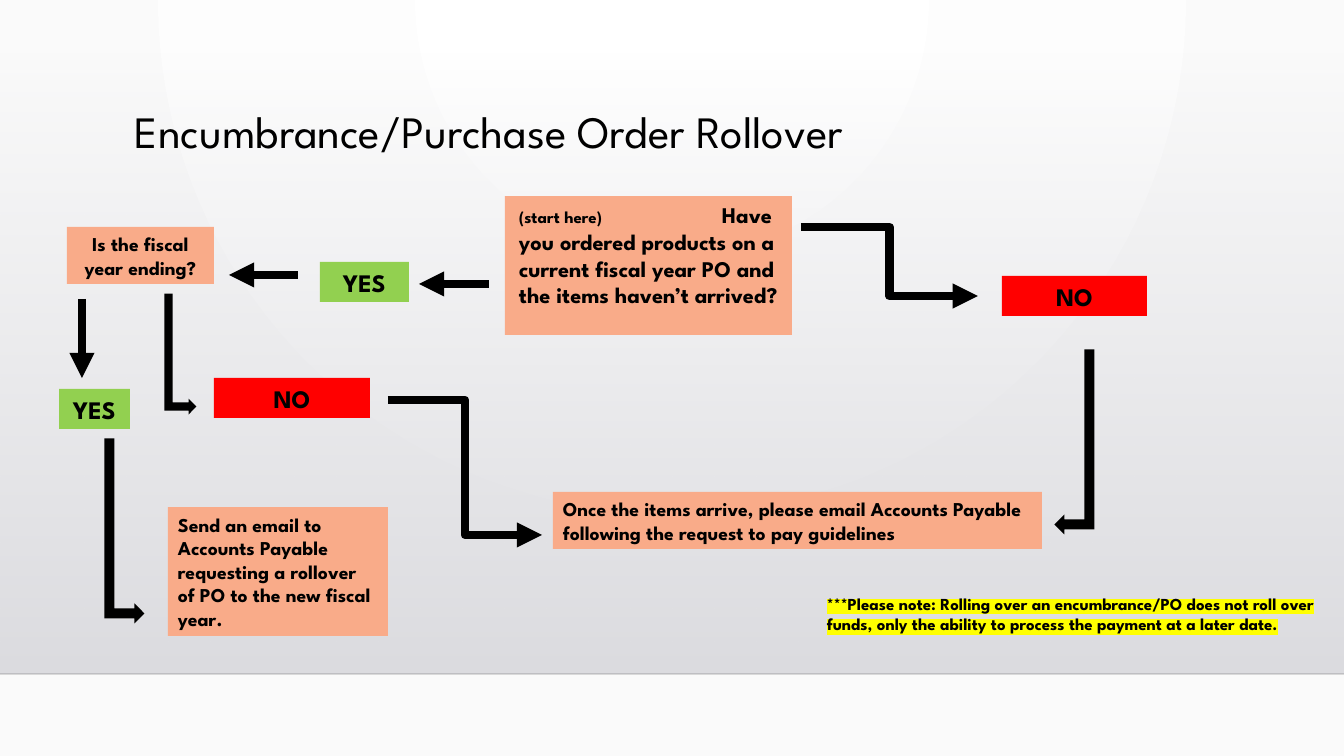
import pptx
import pptx.util
import pptx.oxml
import pptx.oxml.ns
import pptx.dml.color
import pptx.enum.shapes
import pptx.enum.text
import lxml.etree

PX = 12192000 / 1344
SLIDE = (1344, 756)
FONT = "League Spartan"
COLORS = {
    "text": "000000", "arrow": "000000", "step": "F9AB89", "yes": "92D050",
    "no": "FF0000", "highlight": "FFFF00", "center": "FFFFFF", "edge": "FAFAFA",
    "shade_top": "DCDCE0", "shade_bottom": "DEDEE2",
}

HEADING = ("Encumbrance/Purchase Order Rollover", (125, 105, 1058, 116))
START = ([("(start here)\t", 12),
          ("Have you ordered products on a current fiscal year PO and the items haven’t arrived?", 16)],
         (505, 196, 287, 139))
START_TAB = 203
NOTE = ("***Please note: Rolling over an encumbrance/PO does not roll over funds, "
        "only the ability to process the payment at a later date.", (817, 589, 514, 71))
ANSWERS = [
    ("YES", "yes", (320, 262, 89, 40)),
    ("NO", "no", (1002, 276, 145, 40)),
    ("YES", "yes", (59, 389, 71, 40)),
    ("NO", "no", (214, 378, 156, 40)),
]
STEPS = [
    ("Is the fiscal year ending?", "CENTER", (67, 227, 147, 57)),
    ("Send an email to Accounts Payable requesting a rollover of PO to the new fiscal year.",
     "LEFT", (168, 507, 220, 129)),
    ("Once the items arrive, please email Accounts Payable following the request to pay guidelines",
     "LEFT", (553, 492, 489, 57)),
]
ARROWS = [
    ("ELBOW", (388, 400, 542, 535)),
    ("ELBOW", (801, 227, 978, 296)),
    ("STRAIGHT", (489, 284, 419, 284)),
    ("STRAIGHT", (298, 275, 229, 275)),
    ("STRAIGHT", (82, 299, 82, 378)),
]
TURNS = [
    ((120, 338, 121, 32), 90, False),
    ((32, 511, 185, 40), 90, False),
    ((982, 422, 185, 40), 270, True),
]
FLOOR_Y = 674

SHAPE = pptx.enum.shapes.MSO_SHAPE
ALIGN = pptx.enum.text.PP_ALIGN
ANCHOR = pptx.enum.text.MSO_ANCHOR
qn = pptx.oxml.ns.qn


def emu(lengths):
    return [round(length * PX) for length in lengths]


def rgb(key):
    return pptx.dml.color.RGBColor.from_string(COLORS[key])


def set_gradient(fill, owner, stops, direction):
    fill.gradient()
    stop_xml = "".join(
        f'<a:gs pos="{pos}"><a:srgbClr val="{COLORS[key]}"><a:alpha val="{alpha}"/></a:srgbClr></a:gs>'
        for pos, key, alpha in stops)
    gradient = pptx.oxml.parse_xml(
        f'<a:gradFill {pptx.oxml.ns.nsdecls("a")} rotWithShape="1">'
        f'<a:gsLst>{stop_xml}</a:gsLst>{direction}</a:gradFill>')
    previous = next(owner.iter(qn("a:gradFill")))
    previous.getparent().replace(previous, gradient)


def style_run(run, size, bold=True):
    run.font.size = pptx.util.Pt(size)
    run.font.bold = bold
    run.font.color.rgb = rgb("text")
    run.font.name = FONT


def add_block(slide, box, color=None, preset=SHAPE.RECTANGLE):
    block = slide.shapes.add_shape(preset, *emu(box))
    block.shadow.inherit = False
    block.line.fill.background()
    if color:
        block.fill.solid()
        block.fill.fore_color.rgb = rgb(color)
    return block


def write(shape, text, size, align=ALIGN.LEFT, anchor=ANCHOR.TOP, bold=True):
    frame = shape.text_frame
    frame.word_wrap = True
    frame.vertical_anchor = anchor
    frame.text = text
    paragraph = frame.paragraphs[0]
    paragraph.alignment = align
    style_run(paragraph.runs[0], size, bold)
    return paragraph


def add_line(slide, kind, ends, width):
    line = slide.shapes.add_connector(pptx.enum.shapes.MSO_CONNECTOR[kind], *emu(ends))
    line.line.width = pptx.util.Pt(width)
    line.line.color.rgb = rgb("arrow")
    properties = line.element.spPr
    lxml.etree.SubElement(properties, qn("a:effectLst"))
    return properties.find(qn("a:ln"))


def add_backdrop(slide):
    set_gradient(slide.background.fill, slide.element,
                 [(0, "center", 100000), (100000, "edge", 100000)],
                 '<a:path path="circle"><a:fillToRect l="43000" t="0" r="43000" b="100000"/></a:path>')
    shade = add_block(slide, (0, 51, SLIDE[0], FLOOR_Y - 51))
    set_gradient(shade.fill, shade.element,
                 [(0, "shade_top", 0), (100000, "shade_bottom", 100000)],
                 '<a:lin ang="5400000" scaled="0"/>')
    floor = add_line(slide, "STRAIGHT", (0, FLOOR_Y, SLIDE[0], FLOOR_Y), 1)
    tint = next(floor.iter(qn("a:srgbClr")))
    lxml.etree.SubElement(tint, qn("a:alpha")).set("val", "20000")


def add_start(slide):
    pieces, box = START
    start = add_block(slide, box, "step")
    frame = start.text_frame
    frame.word_wrap = True
    frame.vertical_anchor = ANCHOR.TOP
    frame.margin_left = round(14 * PX)
    question = frame.paragraphs[0]
    question.alignment = ALIGN.LEFT
    tabs = lxml.etree.SubElement(question._p.get_or_add_pPr(), qn("a:tabLst"))
    tab = lxml.etree.SubElement(tabs, qn("a:tab"))
    tab.set("pos", str(round(START_TAB * PX)))
    tab.set("algn", "l")
    for text, size in pieces:
        run = question.add_run()
        run.text = text
        style_run(run, size)


def add_note(slide):
    text, box = NOTE
    note = write(slide.shapes.add_textbox(*emu(box)), text, 12)
    fill = next(note._p.iter(qn("a:solidFill")))
    highlight = pptx.oxml.parse_xml(
        f'<a:highlight {pptx.oxml.ns.nsdecls("a")}><a:srgbClr val="{COLORS["highlight"]}"/></a:highlight>')
    fill.addnext(highlight)


def main():
    deck = pptx.Presentation()
    deck.slide_width, deck.slide_height = emu(SLIDE)
    slide = deck.slides.add_slide(deck.slide_layouts[6])
    add_backdrop(slide)

    text, box = HEADING
    heading = write(slide.shapes.add_textbox(*emu(box)), text, 32, bold=False)
    heading.line_spacing = 0.9

    add_start(slide)
    for text, color, box in ANSWERS:
        write(add_block(slide, box, color), text, 18, ALIGN.CENTER, ANCHOR.MIDDLE)
    for text, align, box in STEPS:
        write(add_block(slide, box, "step"), text, 14, ALIGN[align], ANCHOR.MIDDLE)
    add_note(slide)

    for kind, ends in ARROWS:
        arrow = add_line(slide, kind, ends, 6)
        lxml.etree.SubElement(arrow, qn("a:tailEnd")).set("type", "triangle")
    for box, angle, flipped in TURNS:
        turn = add_block(slide, box, "arrow", SHAPE.BENT_UP_ARROW)
        turn.rotation = angle
        if flipped:
            turn.element.spPr.find(qn("a:xfrm")).set("flipH", "1")

    deck.save("out.pptx")


if __name__ == "__main__":
    main()
